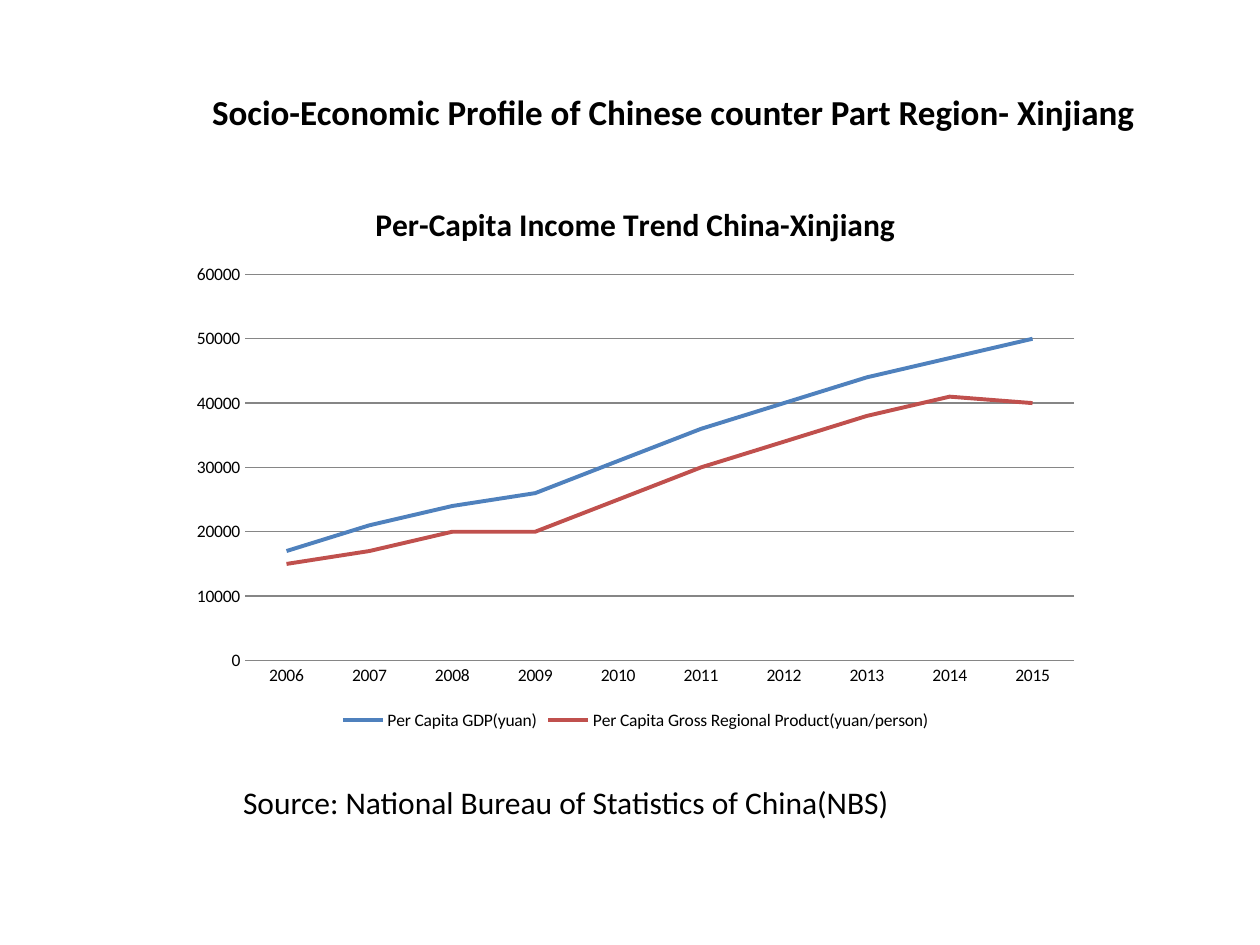
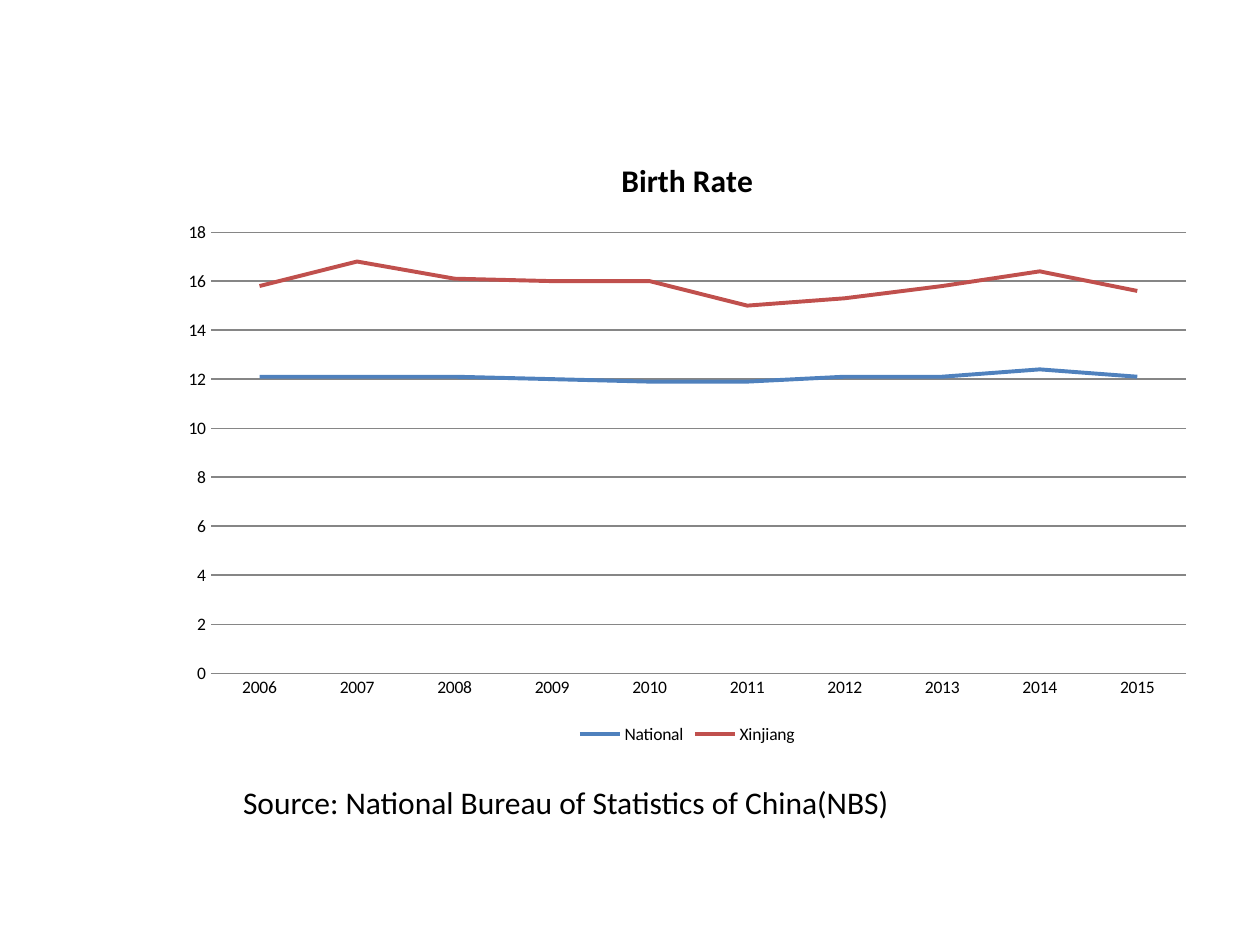
from dataclasses import dataclass

from pptx import Presentation
from pptx import util as u
from pptx.chart.data import CategoryChartData
from pptx.dml.color import RGBColor
from pptx.enum import chart as ch, text


@dataclass(frozen=True)
class Theme:
    font: str = "Calibri"
    ink: RGBColor = RGBColor(0, 0, 0)
    rule: RGBColor = RGBColor(0x86, 0x86, 0x86)
    series: tuple = (RGBColor(0x4F, 0x81, 0xBD), RGBColor(0xC0, 0x50, 0x4D))
    title: u.Pt = u.Pt(20)
    body: u.Pt = u.Pt(18)
    label: u.Pt = u.Pt(10)
    line: u.Pt = u.Pt(2.25)
    hairline: u.Pt = u.Pt(0.75)


THEME = Theme()
TITLE_ONLY, BLANK = 5, 6
YEARS = [str(year) for year in range(2006, 2016)]
SOURCE = "Source: National Bureau of Statistics of China(NBS)"

INCOME = {
    "Per Capita GDP(yuan)":
        [17000, 21000, 24000, 26000, 31000, 36000, 40000, 44000, 47000, 50000],
    "Per Capita Gross Regional Product(yuan/person)":
        [15000, 17000, 20000, 20000, 25000, 30000, 34000, 38000, 41000, 40000],
}
BIRTHS = {
    "National": [12.1, 12.1, 12.1, 12, 11.9, 11.9, 12.1, 12.1, 12.4, 12.1],
    "Xinjiang": [15.8, 16.8, 16.1, 16, 16, 15, 15.3, 15.8, 16.4, 15.6],
}


def set_all(obj, **values):
    for name, value in values.items():
        setattr(obj, name, value)


def set_font(font, size, bold=False):
    set_all(font, name=THEME.font, size=size, bold=bold)
    font.color.rgb = THEME.ink


def set_line(line, color, width):
    line.color.rgb = color
    line.width = width


def place(sp, left, top, width, height):
    set_all(sp, left=u.Cm(left), top=u.Cm(top),
            width=u.Cm(width), height=u.Cm(height))


def write_line(sp, words, size, bold=False):
    """Put one unwrapped, left-aligned line of text in a shape."""
    tf = sp.text_frame
    tf.text = words
    set_all(tf, word_wrap=False, vertical_anchor=text.MSO_ANCHOR.TOP,
            auto_size=text.MSO_AUTO_SIZE.SHAPE_TO_FIT_TEXT)
    p = tf.paragraphs[0]
    p.alignment = text.PP_ALIGN.LEFT
    set_font(p.runs[0].font, size, bold)


def add_title(s, words):
    sp = s.shapes.title
    place(sp, 4.02, 1.7, 19.28, 1.12)
    write_line(sp, words, THEME.title, bold=True)


def add_source(s):
    sp = s.shapes.add_textbox(u.Cm(4.65), u.Cm(15.67), u.Cm(13.69), u.Cm(1.02))
    write_line(sp, SOURCE, THEME.body)


def style_axes(chart, top, step):
    for axis in (chart.category_axis, chart.value_axis):
        set_all(axis, major_tick_mark=ch.XL_TICK_MARK.NONE,
                minor_tick_mark=ch.XL_TICK_MARK.NONE)
    set_line(chart.category_axis.format.line, THEME.rule, THEME.hairline)
    axis = chart.value_axis
    set_all(axis, minimum_scale=0, maximum_scale=top, major_unit=step,
            has_major_gridlines=True)
    axis.format.line.fill.background()
    set_line(axis.major_gridlines.format.line, THEME.rule, THEME.hairline)


def add_line_chart(s, box, heading, rows, top, step):
    """Draw yearly rows as lines, with values from 0 to top."""
    data = CategoryChartData()
    data.categories = YEARS
    for name, values in rows.items():
        data.add_series(name, values)
    chart = s.shapes.add_chart(ch.XL_CHART_TYPE.LINE, *map(u.Cm, box), data).chart
    set_font(chart.font, THEME.label)

    title = chart.chart_title
    title.text_frame.text = heading
    title.include_in_layout = False
    set_font(title.text_frame.paragraphs[0].runs[0].font, THEME.body, bold=True)

    chart.has_legend = True
    set_all(chart.legend, position=ch.XL_LEGEND_POSITION.BOTTOM,
            include_in_layout=False)
    style_axes(chart, top, step)

    plot = chart.plots[0]
    plot.vary_by_categories = False
    for series, color in zip(plot.series, THEME.series):
        series.smooth = False
        series.marker.style = ch.XL_MARKER_STYLE.NONE
        set_line(series.format.line, color, THEME.line)


def add_slide(prs, layout):
    return prs.slides.add_slide(prs.slide_layouts[layout])


def main():
    prs = Presentation()
    set_all(prs, slide_width=u.Cm(25.4), slide_height=u.Cm(19.05))

    s = add_slide(prs, TITLE_ONLY)
    add_line_chart(s, (3.6, 3.6, 18.42, 11.22),
                   "Per-Capita Income Trend China-Xinjiang", INCOME, 60000, 10000)
    add_title(s, "Socio-Economic Profile of Chinese counter Part Region- Xinjiang")
    add_source(s)

    s = add_slide(prs, BLANK)
    add_line_chart(s, (3.38, 2.7, 20.95, 12.4), "Birth Rate", BIRTHS, 18, 2)
    add_source(s)

    prs.save("out.pptx")


if __name__ == "__main__":
    main()
